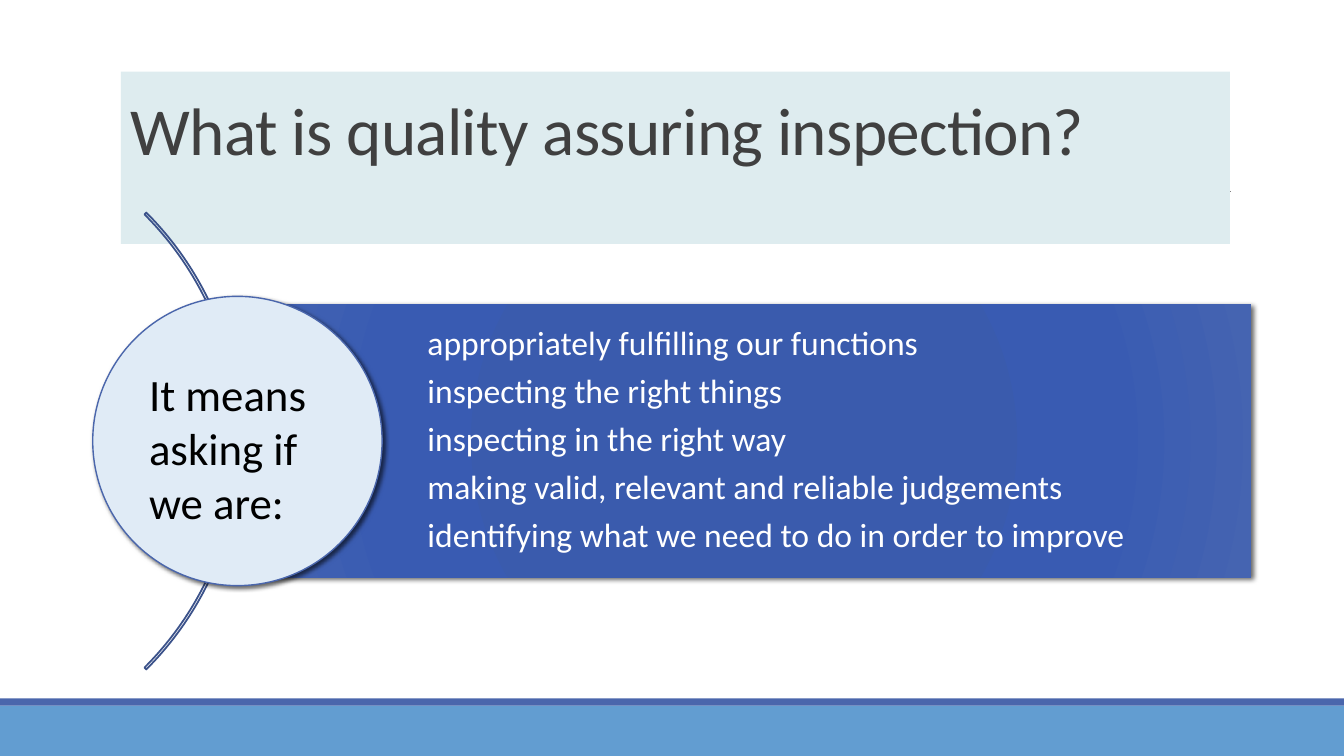
from lxml import etree
from pptx import Presentation, util as u
from pptx.dml.color import RGBColor
from pptx.enum import shapes, text
from pptx.oxml import parse_xml
from pptx.oxml.ns import nsdecls, qn

FONT = "Calibri"
BLUE, WHITE = "4A66AC", "FFFFFF"
POINTS = [
    "appropriately fulfilling our functions",
    "inspecting the right things",
    "inspecting in the right way",
    "making valid, relevant and reliable judgements",
    "identifying what we need to do in order to improve",
]
BAR = (2.35, 3.02, 10.06, 2.71)
BAR_STOPS = [(0, "3759AE"), (34, "3A5BAD"), (70, "395BB2"), (100, "4564B1")]


def rgb(value):
    return RGBColor.from_string(value)


def inches(values):
    return [u.Inches(value) for value in values]


def set_line(line, color, width):
    line.color.rgb = rgb(color)
    line.width = u.Pt(width)


def add_shape(page, kind, place, fill=None, line=None):
    shape = page.shapes.add_shape(kind, *inches(place))
    shape.shadow.inherit = False
    if fill:
        shape.fill.solid()
        shape.fill.fore_color.rgb = rgb(fill)
    else:
        shape.fill.background()
    if line:
        set_line(shape.line, *line)
    else:
        shape.line.fill.background()
    return shape


def add_rule(page, start, end, color, width):
    rule = page.shapes.add_connector(
        shapes.MSO_CONNECTOR.STRAIGHT, *inches(start + end))
    set_line(rule.line, color, width)
    etree.SubElement(rule._element.spPr, qn("a:effectLst"))


def add_shadow(shape, blur):
    effects = shape._element.spPr.find(qn("a:effectLst"))
    effects.append(parse_xml(
        f'<a:outerShdw {nsdecls("a")} blurRad="{u.Pt(blur)}" dist="{u.Pt(2)}" '
        'dir="2700000" algn="tl" rotWithShape="0"><a:srgbClr val="000000">'
        '<a:alpha val="60000"/></a:srgbClr></a:outerShdw>'))


def set_round_gradient(shape, stops):
    marks = "".join(
        f'<a:gs pos="{place * 1000}"><a:srgbClr val="{color}"/></a:gs>'
        for place, color in stops)
    gradient = parse_xml(
        f'<a:gradFill {nsdecls("a")} rotWithShape="1"><a:gsLst>{marks}</a:gsLst>'
        '<a:path path="circle"><a:fillToRect l="100000" t="100000" '
        'r="100000" b="100000"/></a:path></a:gradFill>')
    properties = shape._element.spPr
    properties.replace(properties.find(qn("a:noFill")), gradient)


def write(shape, lines, size, color, frame_format, para_format, tracking=0):
    frame = shape.text_frame
    for name, value in {"word_wrap": True, **frame_format}.items():
        setattr(frame, name, value)
    for index, line in enumerate(lines):
        para = frame.add_paragraph() if index else frame.paragraphs[0]
        for name, value in {"alignment": text.PP_ALIGN.LEFT, **para_format}.items():
            setattr(para, name, value)
        span = para.add_run()
        span.text = line
        for name, value in {"name": FONT, "size": u.Pt(size)}.items():
            setattr(span.font, name, value)
        span.font.color.rgb = rgb(color)
        if tracking:
            span.font._element.set("spc", str(int(tracking * 100)))


def add_text(page, place, *content, **options):
    write(page.shapes.add_textbox(*inches(place)), *content, **options)


def main():
    deck = Presentation()
    deck.slide_width, deck.slide_height = inches((13.33, 7.5))
    page = deck.slides.add_slide(deck.slide_layouts[6])
    kinds = shapes.MSO_SHAPE

    # Footer bands and the rule behind the title
    add_shape(page, kinds.RECTANGLE, (0, 7, 13.33, 0.5), "629DD1")
    add_shape(page, kinds.RECTANGLE, (0, 6.93, 13.33, 0.07), BLUE)
    add_rule(page, (1.31, 1.9), (12.21, 1.9), "808080", 0.5)

    # Title
    title = add_shape(page, kinds.RECTANGLE, (1.2, 0.71, 11, 1.71), "DEECEF")
    write(title, ["What is quality assuring inspection?"], 48, "404040",
          {"vertical_anchor": text.MSO_ANCHOR.BOTTOM,
           "margin_bottom": u.Inches(0.74)},
          {"line_spacing": 0.85}, tracking=-0.5)

    # Arc behind the circle
    arc = add_shape(page, kinds.BLOCK_ARC, (-4.02, 1.17, 6.41, 6.41),
                    line=("3B528A", 1.25))
    for index, value in enumerate((189, 27, 0.004)):
        arc.adjustments[index] = value

    # Bar with the list of points
    bar = add_shape(page, kinds.RECTANGLE, BAR)
    set_round_gradient(bar, BAR_STOPS)
    add_shadow(bar, 3.5)
    margins = dict.fromkeys(("margin_top", "margin_right", "margin_bottom"),
                            u.Inches(0.07))
    add_text(page, BAR, POINTS, 24, WHITE,
             {"vertical_anchor": text.MSO_ANCHOR.MIDDLE,
              "margin_left": u.Inches(1.89), **margins},
             {"line_spacing": 0.9, "space_after": u.Pt(8.4)})

    # Circle with the lead-in
    circle = add_shape(page, kinds.OVAL, (0.92, 2.94, 2.87, 2.87), "E0EBF6",
                       (BLUE, 1))
    add_shadow(circle, 3)
    add_text(page, (1.38, 3.59, 2.23, 1.72), ["It means asking if we are:"],
             32, "000000", {}, {})

    deck.save("out.pptx")


if __name__ == "__main__":
    main()
